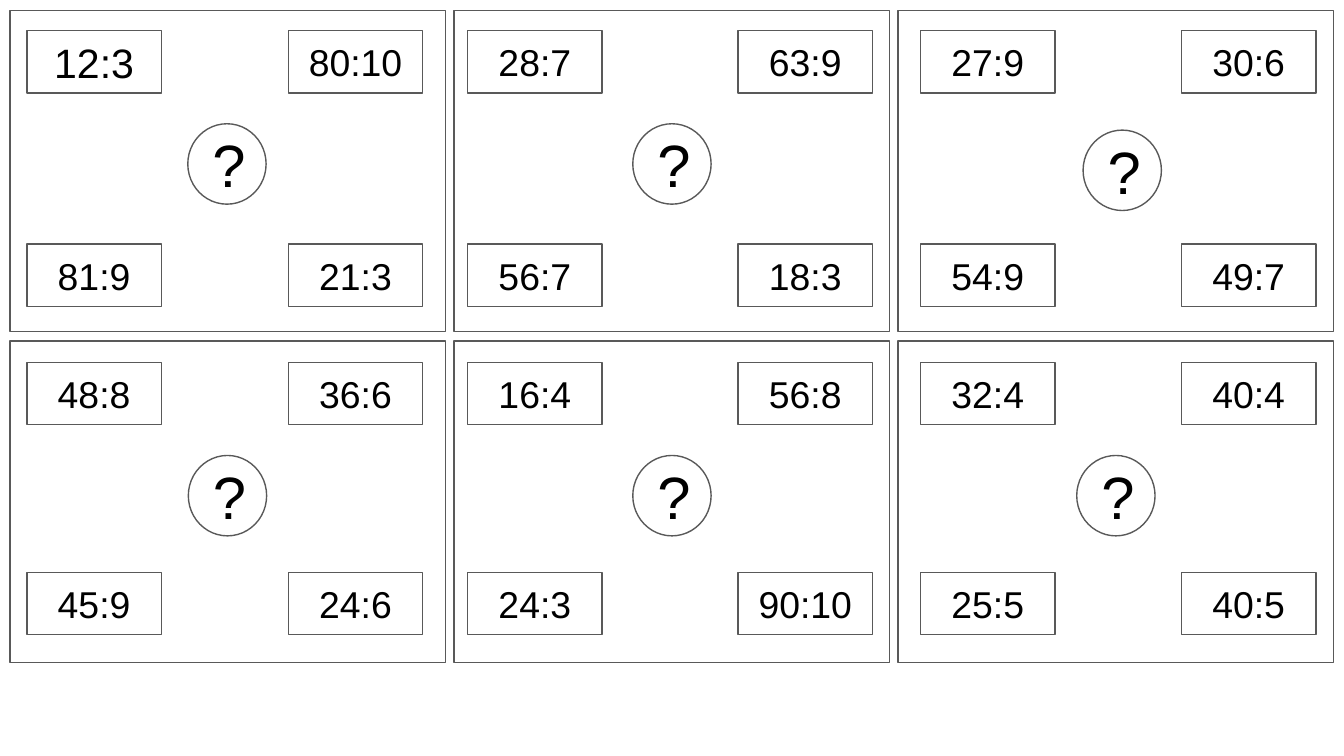
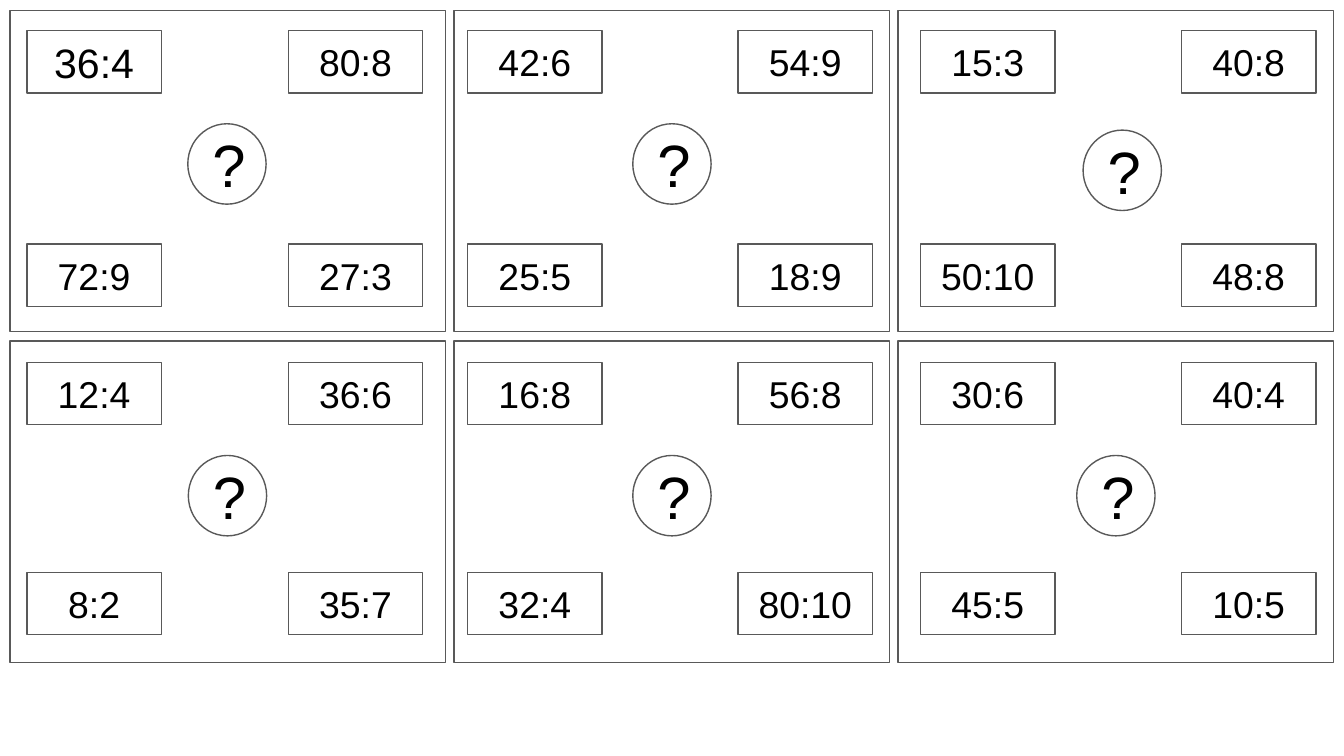
from pptx import Presentation
from pptx.dml.color import RGBColor
from pptx.enum.shapes import MSO_SHAPE as Shape
from pptx.enum.text import MSO_ANCHOR as Anchor, PP_ALIGN as Align
from pptx.util import Cm, Pt

# Content: per slide, the sums as they stand in four rows of six
SLIDES = [
    [
        ["12:3", "80:10", "28:7", "63:9", "27:9", "30:6"],
        ["81:9", "21:3", "56:7", "18:3", "54:9", "49:7"],
        ["48:8", "36:6", "16:4", "56:8", "32:4", "40:4"],
        ["45:9", "24:6", "24:3", "90:10", "25:5", "40:5"],
    ],
    [
        ["36:4", "80:8", "42:6", "54:9", "15:3", "40:8"],
        ["72:9", "27:3", "25:5", "18:9", "50:10", "48:8"],
        ["12:4", "36:6", "16:8", "56:8", "30:6", "40:4"],
        ["8:2", "35:7", "32:4", "80:10", "45:5", "10:5"],
    ],
]
MARK = "?"

# Layout in centimetres
CARD = (8.23, 6.07)
START = (0.19, 0.2)
STEP = (8.39, 6.25)
BOX = (2.54, 1.18)
COLS = [0.51, 5.45, 8.84, 13.95, 17.4, 22.33]
ROWS = [0.58, 4.61, 6.85, 10.82]
DISC = (1.48, 1.52)
DISCS = [
    (3.55, 2.34), (11.96, 2.34), (20.47, 2.46),
    (3.56, 8.61), (11.96, 8.61), (20.35, 8.61),
]

# Shared look
WHITE, GREY, BLACK = "FFFFFF", "595959", "000000"
FONT = {"name": "Arial", "bold": False}
FRAME = {
    "word_wrap": True,
    "vertical_anchor": Anchor.MIDDLE,
    **{f"margin_{side}": Cm(0.25) for side in ("left", "top", "right", "bottom")},
}


def color(code):
    return RGBColor.from_string(code)


def style(item, values):
    for key, value in values.items():
        setattr(item, key, value)


def draw(slide, kind, spot, size, text="", points=20):
    shape = slide.shapes.add_shape(kind, *map(Cm, (*spot, *size)))
    shape.shadow.inherit = False
    shape.fill.solid()
    shape.fill.fore_color.rgb = color(WHITE)
    shape.line.color.rgb = color(GREY)
    shape.line.width = Pt(0.75)
    if text:
        style(shape.text_frame, FRAME)
        para = shape.text_frame.paragraphs[0]
        para.alignment = Align.CENTER
        run = para.add_run()
        run.text = text
        style(run.font, {**FONT, "size": Pt(points)})
        run.font.color.rgb = color(BLACK)


def build(slide, sums):
    # Cards
    for col in range(3):
        for row in range(2):
            spot = (START[0] + col * STEP[0], START[1] + row * STEP[1])
            draw(slide, Shape.RECTANGLE, spot, CARD)

    # Sums, the first one a little larger
    for row, (top, line) in enumerate(zip(ROWS, sums)):
        for col, (left, text) in enumerate(zip(COLS, line)):
            points = 22 if row == col == 0 else 20
            draw(slide, Shape.RECTANGLE, (left, top), BOX, text, points)

    # Question marks
    for spot in DISCS:
        draw(slide, Shape.OVAL, spot, DISC, MARK, 32)


def main():
    deck = Presentation()
    style(deck, {"slide_width": Cm(25.4), "slide_height": Cm(14.29)})
    blank = deck.slide_layouts[6]
    for sums in SLIDES:
        build(deck.slides.add_slide(blank), sums)
    deck.save("out.pptx")


if __name__ == "__main__":
    main()
